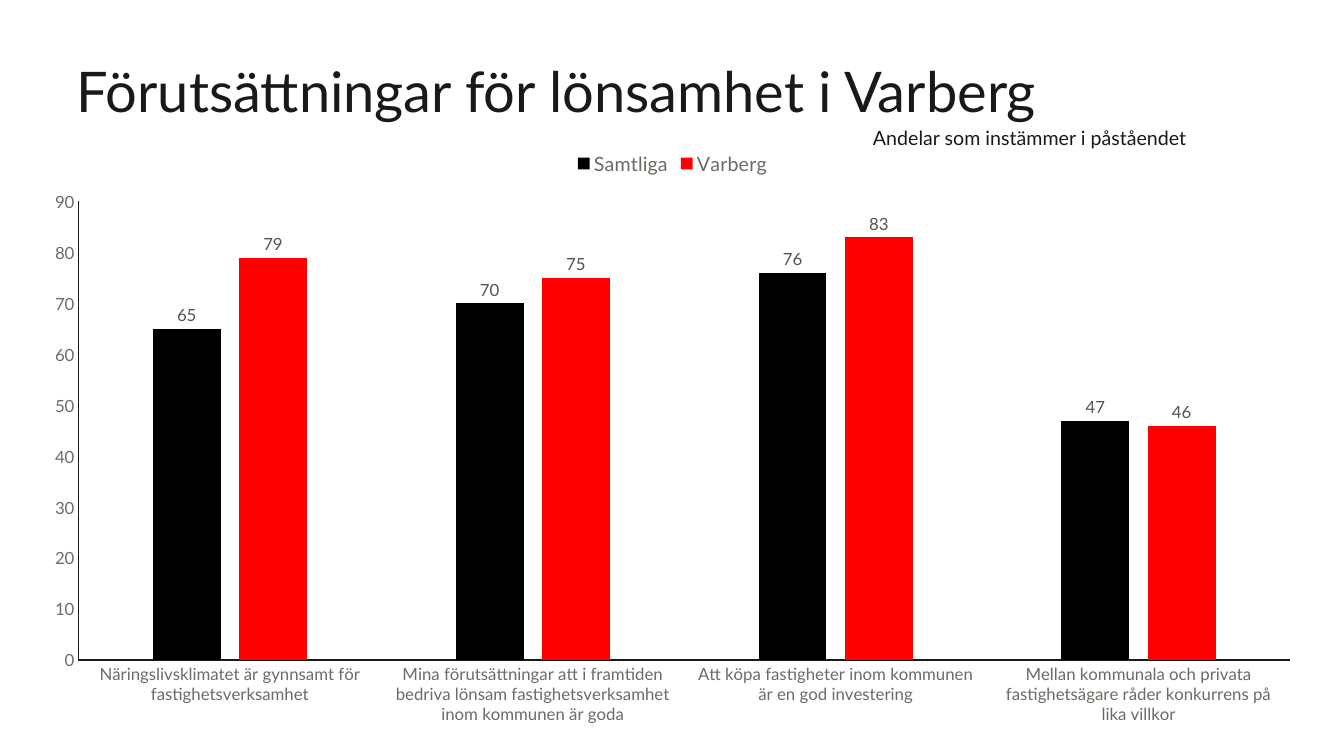
from pptx import Presentation
from pptx.chart.data import CategoryChartData as Data
from pptx.dml.color import RGBColor as RGB
from pptx.enum.chart import XL_CHART_TYPE as Kind, XL_LABEL_POSITION as Spot
from pptx.enum.chart import XL_LEGEND_POSITION as Side, XL_TICK_MARK as Tick
from pptx.enum.text import MSO_ANCHOR as Anchor
from pptx.util import Inches, Pt

theme = {
    "face": "Lato",
    "ink": "1A1918", "axis": "6E6A65", "label": "56524F",
    "bars": ["000000", "FF0000"],
    "title": 40, "note": 14, "legend": 14, "small": 12, "base": 10,
}


def style(font, size, color):
    form = {"name": theme["face"], "size": Pt(theme[size]), "bold": False}
    for key, val in form.items():
        setattr(font, key, val)
    font.color.rgb = RGB.from_string(theme[color])


def write(text, box, size, form):
    frame = slide.shapes.add_textbox(*map(Inches, box)).text_frame
    for key, val in form.items():
        setattr(frame, key, val)
    para = frame.paragraphs[0]
    run = para.add_run()
    run.text = text
    style(run.font, size, "ink")
    return para


deck = Presentation()
deck.slide_width, deck.slide_height = Inches(13.33), Inches(7.5)
slide = deck.slides.add_slide(deck.slide_layouts[6])

edges = ["margin_left", "margin_top", "margin_right", "margin_bottom"]
head = write("Förutsättningar för lönsamhet i Varberg", (0.76, 0.06, 11.02, 1.16), "title",
             {"word_wrap": True, "vertical_anchor": Anchor.BOTTOM, **dict.fromkeys(edges, 0)})
head.line_spacing = 0.8
write("Andelar som instämmer i påståendet", (8.56, 1.2, 4.33, 0.34), "note", {"word_wrap": True})

data = Data(number_format="0")
data.categories = [
    "Näringslivsklimatet är gynnsamt för fastighetsverksamhet",
    "Mina förutsättningar att i framtiden bedriva lönsam fastighetsverksamhet inom kommunen är goda",
    "Att köpa fastigheter inom kommunen är en god investering",
    "Mellan kommunala och privata fastighetsägare råder konkurrens på lika villkor",
]
data.add_series("Samtliga", [65, 70, 76, 47])
data.add_series("Varberg", [79, 75, 83, 46])

area = map(Inches, (0.29, 1.39, 12.76, 5.91))
chart = slide.shapes.add_chart(Kind.COLUMN_CLUSTERED, *area, data).chart
chart.has_title = False
style(chart.font, "base", "ink")

chart.has_legend = True
legend = chart.legend
legend.position = Side.TOP
legend.include_in_layout = False
style(legend.font, "legend", "axis")

for axis in (chart.category_axis, chart.value_axis):
    form = {"major_tick_mark": Tick.NONE, "minor_tick_mark": Tick.NONE,
            "has_major_gridlines": False}
    for key, val in form.items():
        setattr(axis, key, val)
    style(axis.tick_labels.font, "small", "axis")
    line = axis.format.line
    line.width = Pt(0.75)
    line.color.rgb = RGB.from_string(theme["ink"])

scale = chart.value_axis
for key, val in {"minimum_scale": 0, "maximum_scale": 90, "major_unit": 10}.items():
    setattr(scale, key, val)
scale.tick_labels.number_format = "0"
scale.tick_labels.number_format_is_linked = False

plot = chart.plots[0]
for key, val in {"gap_width": 219, "overlap": -27, "vary_by_categories": False}.items():
    setattr(plot, key, val)

for bar, color in zip(plot.series, theme["bars"]):
    bar.format.fill.solid()
    bar.format.fill.fore_color.rgb = RGB.from_string(color)
    tags = bar.data_labels
    form = {"show_value": True, "position": Spot.OUTSIDE_END,
            "number_format": "0", "number_format_is_linked": False}
    for key, val in form.items():
        setattr(tags, key, val)
    style(tags.font, "small", "label")

deck.save("out.pptx")
